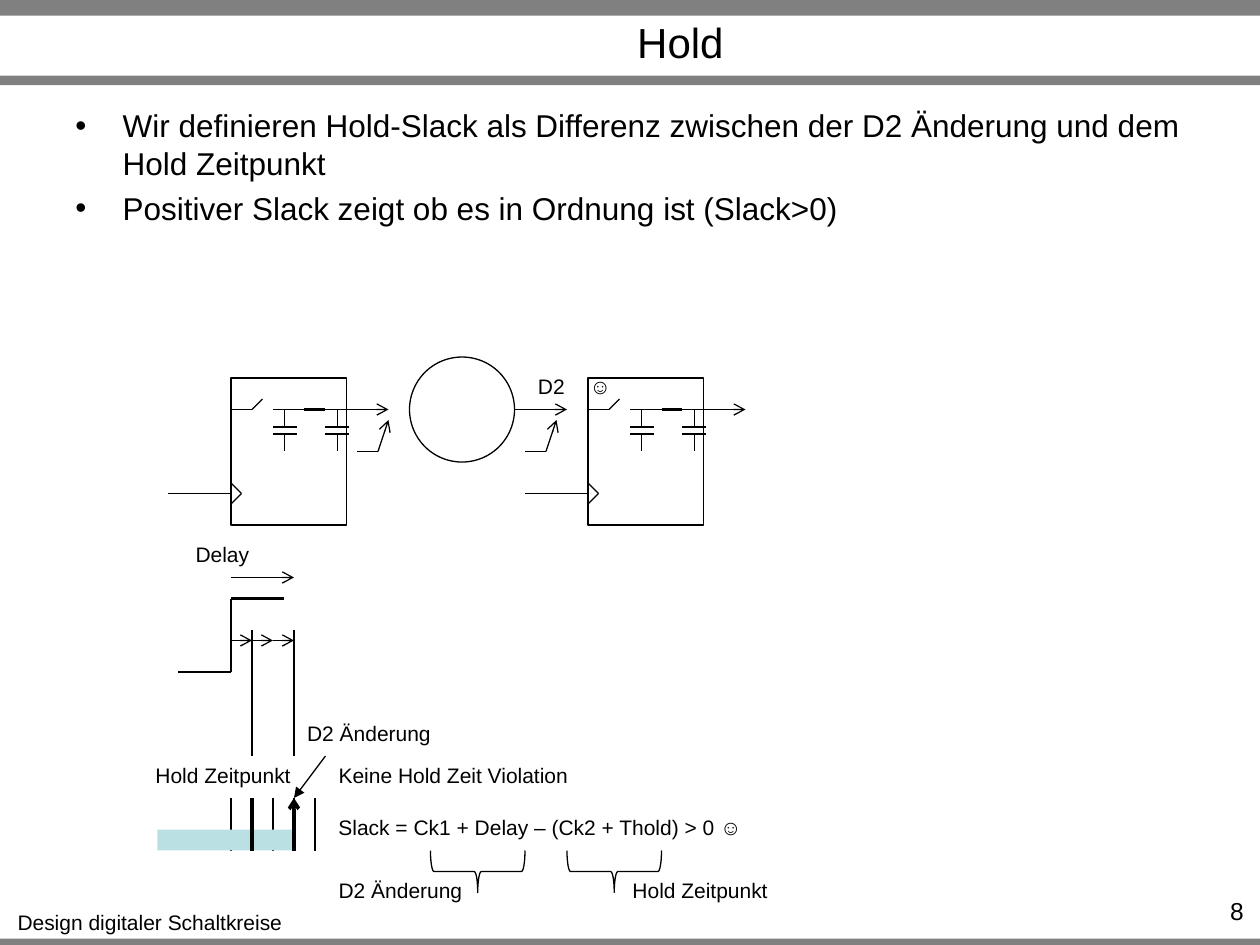
import pptx
import pptx.util
import pptx.dml.color
import pptx.enum.shapes
import pptx.enum.text
import pptx.oxml.ns
import lxml.etree

Pt = pptx.util.Pt
SHAPE = pptx.enum.shapes.MSO_SHAPE
ALIGN = pptx.enum.text.PP_ALIGN
ANCHOR = pptx.enum.text.MSO_ANCHOR
BLACK = pptx.dml.color.RGBColor(0x00, 0x00, 0x00)
GRAY = pptx.dml.color.RGBColor(0x80, 0x80, 0x80)
LIGHT_TEAL = pptx.dml.color.RGBColor(0xBB, 0xE0, 0xE3)
FONT = "Arial"
THIN, THICK = 0.75, 2
FLIP_FLOP_LEFTS = (132, 336)
TICK_LEFT, TICK_GAP = 132, 12


def apply_format(target, values):
    for name, value in values.items():
        setattr(target, name, value)


def add_child(parent, tag, **attributes):
    return lxml.etree.SubElement(parent, pptx.oxml.ns.qn(tag), attributes)


def add_shape(slide, kind, left, top, width, height, fill=None, rotation=0):
    shape = slide.shapes.add_shape(kind, Pt(left), Pt(top), Pt(width), Pt(height))
    shape.shadow.inherit = False
    shape.rotation = rotation
    if fill is None:
        shape.fill.background()
        shape.line.color.rgb = BLACK
        shape.line.width = Pt(THIN)
    else:
        shape.fill.solid()
        shape.fill.fore_color.rgb = fill
        shape.line.fill.background()


def add_line(slide, x1, y1, x2, y2, width=THIN, head=None, tail=None):
    connector = slide.shapes.add_connector(
        pptx.enum.shapes.MSO_CONNECTOR.STRAIGHT, Pt(x1), Pt(y1), Pt(x2), Pt(y2))
    connector.line.color.rgb = BLACK
    connector.line.width = Pt(width)
    line = connector.line._get_or_add_ln()
    if head:
        add_child(line, "a:headEnd", type=head)
    if tail:
        add_child(line, "a:tailEnd", type=tail)
    add_child(connector._element.spPr, "a:effectLst")


def add_arrow(slide, x1, y1, x2, y2):
    add_line(slide, x1, y1, x2, y2, tail="arrow")


def add_polyline(slide, *points):
    for start, end in zip(points, points[1:]):
        add_line(slide, *start, *end)


def add_text(slide, lines, left, top, width, height, size=12, align=ALIGN.CENTER,
             bullets=False, **frame_format):
    box = slide.shapes.add_textbox(Pt(left), Pt(top), Pt(width), Pt(height))
    frame = box.text_frame
    apply_format(frame, {"word_wrap": True, **frame_format})
    for index, text in enumerate(lines):
        paragraph = frame.paragraphs[0] if index == 0 else frame.add_paragraph()
        paragraph.text = text
        paragraph.alignment = align
        if index:
            paragraph.space_before = Pt(4)
        if bullets:
            properties = paragraph._p.get_or_add_pPr()
            properties.set("marL", str(Pt(27)))
            properties.set("indent", str(-Pt(27)))
            add_child(properties, "a:buFont", typeface=FONT)
            add_child(properties, "a:buChar", char="•")
        for run in paragraph.runs:
            apply_format(run.font, {"name": FONT, "size": Pt(size)})
            run.font.color.rgb = BLACK


def add_label(slide, text, left, top, width):
    add_text(slide, [text], left, top, width, 21.6, word_wrap=False)


def add_frame(slide):
    for top, height in ((536.4, 5.4), (0, 9), (43.2, 5.4)):
        add_shape(slide, SHAPE.RECTANGLE, 0, top, 720, height, GRAY)
    add_label(slide, "Design digitaler Schaltkreise", 2.2, 516.2, 167)
    add_text(slide, ["Hold"], 93.6, 10.1, 590.4, 27.4, 24,
             vertical_anchor=ANCHOR.MIDDLE)
    add_text(slide, [
        "Wir definieren Hold-Slack als Differenz zwischen der D2 Änderung und dem Hold Zeitpunkt",
        "Positiver Slack zeigt ob es in Ordnung ist (Slack>0)",
    ], 36, 54.7, 648, 89.3, 18, ALIGN.LEFT, bullets=True, margin_top=Pt(6))
    add_text(slide, ["8"], 655.2, 508.3, 62.6, 17.3, 14, ALIGN.RIGHT)


def add_capacitor(slide, left):
    center, right = left + 6.75, left + 13.5
    add_line(slide, center, 234, center, 244)
    for y in (244, 248):
        add_line(slide, right, y, left, y)
    add_line(slide, center, 248, center, 258)


def add_flip_flop(slide, left):
    add_shape(slide, SHAPE.RECTANGLE, left, 216, 66, 84)
    add_polyline(slide, (left, 276), (left + 6, 282), (left, 288))
    add_line(slide, left, 282, left - 36, 282)
    add_polyline(slide, (left, 234), (left + 12, 234), (left + 18, 228))
    add_line(slide, left + 24, 234, left + 42, 234)
    add_line(slide, left + 42, 234, left + 54, 234, THICK)
    add_line(slide, left + 54, 234, left + 60, 234)
    add_arrow(slide, left + 60, 234, left + 90, 234)
    for offset in (24, 54):
        add_capacitor(slide, left + offset)


def add_signal_edge(slide, left):
    add_line(slide, left, 258, left + 12, 258)
    add_arrow(slide, left + 12, 258, left + 18, 240)


def add_circuit(slide):
    for left in FLIP_FLOP_LEFTS:
        add_flip_flop(slide, left)
    add_shape(slide, SHAPE.OVAL, 234, 204, 60, 60)
    add_arrow(slide, 294, 234, 324, 234)
    for left in (204, 300):
        add_signal_edge(slide, left)
    add_label(slide, "☺", 329.8, 210, 24.5)
    add_label(slide, "D2", 300, 210, 30.2)


def add_timing(slide):
    ticks = [TICK_LEFT + TICK_GAP * index for index in range(5)]
    clock, hold, middle, change, _ = ticks
    add_label(slide, "Delay", 104.4, 306, 45.4)
    add_arrow(slide, clock, 330, change, 330)
    add_line(slide, clock, 342, 162, 342, THICK)
    add_polyline(slide, (clock, 342), (clock, 384), (102, 384))
    for start, end in zip(ticks[:3], ticks[1:4]):
        add_arrow(slide, start, 366, end, 366)
    for x in (hold, change):
        add_line(slide, x, 360, x, 432)
    for x in ticks:
        add_line(slide, x, 456, x, 486)
    add_shape(slide, SHAPE.RECTANGLE, 90, 474, 78, 12, LIGHT_TEAL)
    add_line(slide, hold, 456, hold, 486, THICK)
    add_line(slide, change, 456, change, 486, THICK, head="arrow")
    add_line(slide, 186, 432, change, 456, tail="triangle")
    add_label(slide, "D2 Änderung", 168, 408, 85.7)
    add_label(slide, "Hold Zeitpunkt", 81.4, 432, 92.2)


def add_slack_formula(slide):
    add_label(slide, "Keine Hold Zeit Violation", 186, 432, 146.2)
    add_label(slide, "Slack = Ck1 + Delay – (Ck2 + Thold) > 0 ☺", 186, 462, 245.5)
    for left in (261, 339):
        add_shape(slide, SHAPE.LEFT_BRACE, left, 471, 24, 54, rotation=270)
    add_label(slide, "D2 Änderung", 186, 498, 85.7)
    add_label(slide, "Hold Zeitpunkt", 354, 498, 92.2)


def main():
    presentation = pptx.Presentation()
    apply_format(presentation, {"slide_width": Pt(720), "slide_height": Pt(540)})
    slide = presentation.slides.add_slide(presentation.slide_layouts[6])
    add_frame(slide)
    add_circuit(slide)
    add_timing(slide)
    add_slack_formula(slide)
    presentation.save("out.pptx")


if __name__ == "__main__":
    main()
